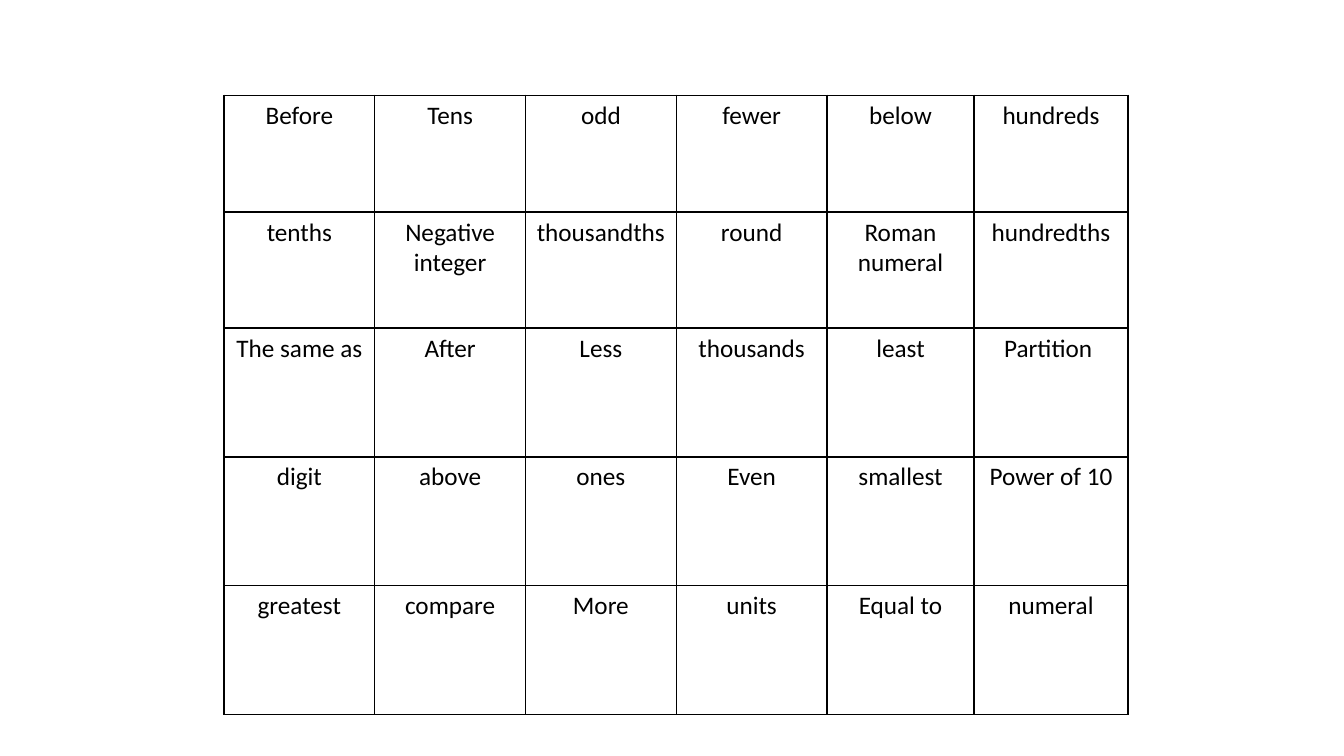
"""Build a slide with a grid of place value vocabulary."""
from lxml import etree
from pptx import Presentation
from pptx.dml.color import RGBColor
from pptx.enum import text
from pptx.oxml import ns
from pptx.util import Pt

COLORS = {"ink": "000000", "paper": "FFFFFF"}
WORDS = [
    ["Before", "Tens", "odd", "fewer", "below", "hundreds"],
    ["tenths", "Negative integer", "thousandths", "round", "Roman numeral", "hundredths"],
    ["The same as", "After", "Less", "thousands", "least", "Partition "],
    ["digit", "above", "ones", "Even", "smallest", "Power of 10"],
    ["greatest", "compare", "More", "units", "Equal to", "numeral"],
]
WIDTHS = [107.7] * 4 + [105, 110]
HEIGHTS = [83.5, 82.8] + [92.1] * 3


def write(tf, words, size=18, font="Calibri", color="ink", align=text.PP_ALIGN.CENTER):
    p = tf.paragraphs[0]
    p.alignment = align
    r = p.add_run()
    r.text = words
    r.font.size = Pt(size)
    r.font.name = font
    r.font.color.rgb = RGBColor.from_string(COLORS[color])


def add_borders(cell, width=1, color="ink"):
    tcPr = cell._tc.get_or_add_tcPr()
    for side in ("lnL", "lnR", "lnT", "lnB"):
        ln = etree.SubElement(tcPr, ns.qn(f"a:{side}"), w=str(Pt(width)))
        fill = etree.SubElement(ln, ns.qn("a:solidFill"))
        etree.SubElement(fill, ns.qn("a:srgbClr"), val=COLORS[color])


prs = Presentation()
prs.slide_width, prs.slide_height = Pt(960), Pt(540)
s = prs.slides.add_slide(prs.slide_layouts[6])

frame = s.shapes.add_table(len(HEIGHTS), len(WIDTHS), Pt(160), Pt(68),
                           Pt(sum(WIDTHS)), Pt(sum(HEIGHTS)))
table = frame.table
table.first_row = False
table.horz_banding = False
for column, width in zip(table.columns, WIDTHS):
    column.width = Pt(width)
for row, height, words in zip(table.rows, HEIGHTS, WORDS):
    row.height = Pt(height)
    for cell, word in zip(row.cells, words):
        write(cell.text_frame, word)
        add_borders(cell)
        cell.fill.solid()
        cell.fill.fore_color.rgb = RGBColor.from_string(COLORS["paper"])

prs.save("out.pptx")
